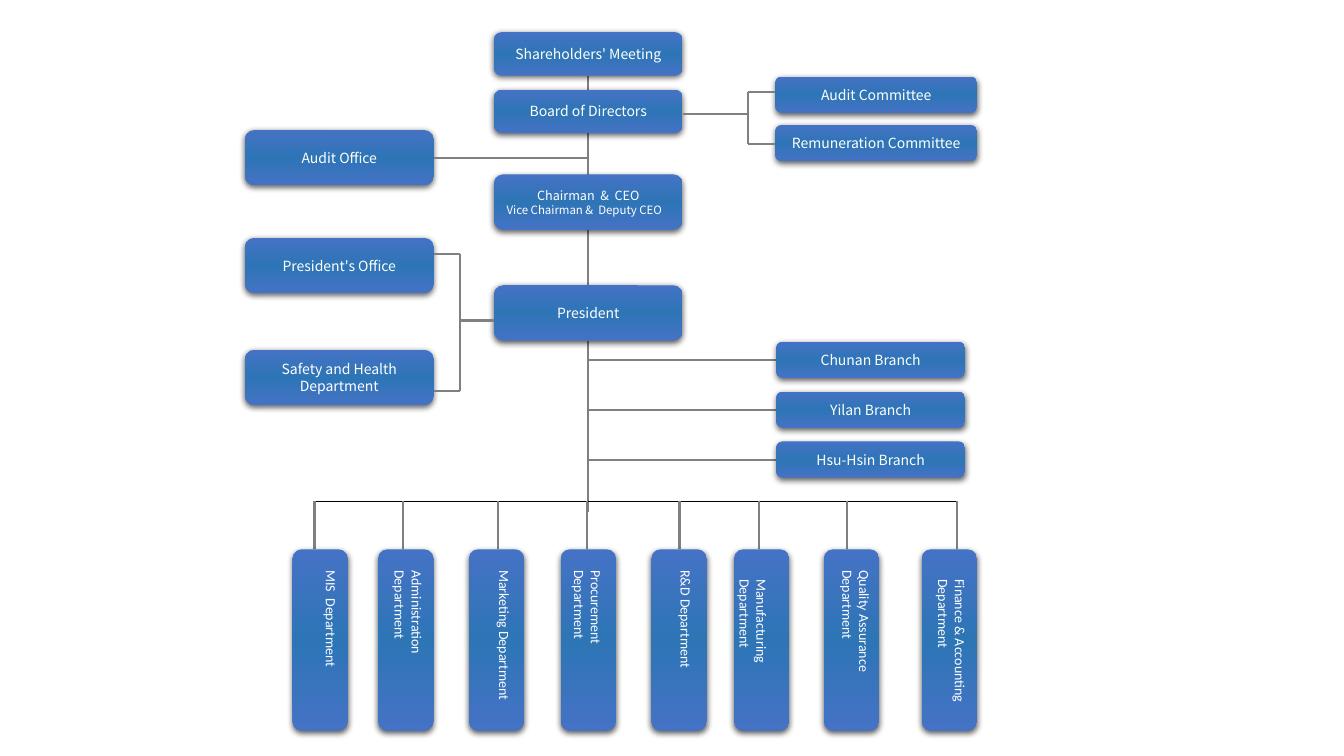
from lxml import etree
from pptx import Presentation, util as u
from pptx.dml.color import RGBColor
from pptx.enum import shapes, text
from pptx.oxml import parse_xml
from pptx.oxml.ns import nsdecls, qn

COLORS = {"edge": "4472C4", "middle": "2E75B6", "text": "FFFFFF",
          "line": "808080", "bus": "000000"}
BOX_FONT, DEPT_FONT = "Noto Sans CJK TC", "Calibri"
BOX_W = 1.87
SPINE_X = 5.83
BUS_Y = 4.97


def set_font(p, name, size):
    p.font.name, p.font.size = name, u.Pt(size)
    p.font.color.rgb = RGBColor.from_string(COLORS["text"])


def add_line(s, x1, y1, x2, y2, color="line", width=1.5):
    cn = s.shapes.add_connector(shapes.MSO_CONNECTOR.STRAIGHT,
                                *map(u.Inches, (x1, y1, x2, y2)))
    cn.line.color.rgb = RGBColor.from_string(COLORS[color])
    cn.line.width = u.Pt(width)
    etree.SubElement(cn._element.spPr, qn("a:effectLst"))


def add_box(s, x, y, w, h, *lines):
    """Rounded gradient box; each line is (text, size, alignment)."""
    sp = s.shapes.add_shape(shapes.MSO_SHAPE.ROUNDED_RECTANGLE,
                            *map(u.Inches, (x, y, w, h)))
    sp.line.fill.background()
    stops = "".join(f'<a:gs pos="{pos}"><a:srgbClr val="{COLORS[c]}"/></a:gs>'
                    for pos, c in ((0, "edge"), (50000, "middle"), (100000, "edge")))
    sp._element.spPr.find(qn("a:prstGeom")).addnext(parse_xml(
        f'<a:gradFill {nsdecls("a")} rotWithShape="1"><a:gsLst>{stops}</a:gsLst>'
        '<a:lin ang="5400000" scaled="0"/></a:gradFill>'))
    sp.shadow.inherit = False
    sp._element.spPr.find(qn("a:effectLst")).append(parse_xml(
        f'<a:outerShdw {nsdecls("a")} blurRad="57150" dist="19050" dir="5400000" '
        'algn="ctr" rotWithShape="0"><a:srgbClr val="000000"><a:alpha val="63000"/>'
        '</a:srgbClr></a:outerShdw>'))
    tf = sp.text_frame
    tf.word_wrap = True
    tf.vertical_anchor = text.MSO_ANCHOR.MIDDLE
    for i, (words, size, align) in enumerate(lines):
        p = tf.add_paragraph() if i else tf.paragraphs[0]
        p.text, p.alignment = words, align
        set_font(p, BOX_FONT, size)


def add_label_box(s, x, y, w, h, words):
    add_box(s, x, y, w, h, (words, 10, text.PP_ALIGN.CENTER))


def add_vertical_text(s, x, y, w, h, words):
    tb = s.shapes.add_textbox(*map(u.Inches, (x, y, w, h)))
    tf = tb.text_frame
    tf.word_wrap = True
    tb._element.txBody.bodyPr.set("vert", "eaVert")
    p = tf.paragraphs[0]
    p.text = words
    set_font(p, DEPT_FONT, 10)


def leadership(s, x, y):
    """Central column from the shareholders down to the president."""
    president_y = y + 2.51
    add_line(s, SPINE_X, y + 0.43, SPINE_X, president_y)
    add_line(s, SPINE_X, president_y + 0.55, SPINE_X, BUS_Y + 0.11)
    add_label_box(s, x, y, BOX_W, 0.43, "Shareholders' Meeting")
    add_label_box(s, x, y + 0.57, BOX_W, 0.43, "Board of Directors")
    add_box(s, x, y + 1.41, BOX_W, 0.55,
            ("Chairman  &  CEO", 9, text.PP_ALIGN.CENTER),
            ("Vice Chairman &  Deputy CEO", 8.2, text.PP_ALIGN.LEFT))
    add_label_box(s, x, president_y, BOX_W, 0.55, "President")


def offices(s, x, y):
    """Left-hand staff units and the bracket that joins two to the president."""
    for dy, name in ((0, "Audit Office"), (1.07, "President's Office"),
                     (2.18, "Safety and Health Department")):
        add_label_box(s, x, y + dy, BOX_W, 0.55, name)
    right = x + BOX_W
    bracket, top, bottom = right + 0.26, y + 1.23, y + 2.59
    add_line(s, right, y + 0.28, SPINE_X, y + 0.28)
    for end_y in (top, bottom):
        add_line(s, right, end_y, bracket, end_y)
    add_line(s, bracket, top, bracket, bottom)
    add_line(s, bracket, y + 1.89, right + 0.6, y + 1.89)


def committees(s, x, y):
    bracket = x - 0.27
    ends = y + 0.15, y + 0.67
    for i, name in enumerate(("Audit Committee", "Remuneration Committee")):
        add_label_box(s, x, y + 0.48 * i, 2, 0.36, name)
        add_line(s, bracket, ends[i], x, ends[i])
    add_line(s, bracket, ends[0], bracket, ends[1])
    add_line(s, bracket - 0.65, y + 0.37, bracket, y + 0.37)


def branches(s, x, y, pitch):
    for i, name in enumerate(("Chunan Branch", "Yilan Branch", "Hsu-Hsin Branch")):
        row_y = y + pitch * i
        add_line(s, SPINE_X, row_y + 0.18, x, row_y + 0.18)
        add_label_box(s, x, row_y, BOX_W, 0.36, name)


def departments(s, y, h):
    """Bottom row: box left, drop line x, text left, top offset, width, height."""
    rows = (
        ("MIS  Department", 2.9, 3.12, 3.05, 0.11, 0.37, 1.3),
        ("Administration Department", 3.75, 4, 3.73, 0.11, 0.54, 1.3),
        ("Marketing Department", 4.65, 4.94, 4.77, 0.11, 0.37, 1.51),
        ("Procurement Department", 5.56, 5.82, 5.51, 0.11, 0.54, 1.64),
        ("R&D Department", 6.46, 6.74, 6.57, 0.11, 0.37, 1.64),
        ("Manufacturing Department", 7.28, 7.53, 7.15, 0.2, 0.54, 1.64),
        ("Quality Assurance Department", 8.17, 8.4, 8.17, 0.11, 0.54, 1.22),
        ("Finance & Accounting Department", 9.14, 9.49, 9.12, 0.2, 0.54, 1.64),
    )
    add_line(s, rows[0][2], BUS_Y, rows[-1][2], BUS_Y, "bus", 0.5)
    for name, left, drop_x, text_x, dy, text_w, text_h in rows:
        add_line(s, drop_x, BUS_Y, drop_x, y)
        add_box(s, left, y, 0.55, h)
        add_vertical_text(s, text_x, y + dy, text_w, text_h, name)


def main():
    prs = Presentation()
    prs.slide_width, prs.slide_height = u.Inches(13.33), u.Inches(7.5)
    s = prs.slides.add_slide(prs.slide_layouts[6])
    leadership(s, 4.9, 0.32)
    offices(s, 2.43, 1.29)
    committees(s, 7.69, 0.76)
    branches(s, 7.7, 3.39, 0.495)
    departments(s, 5.45, 1.8)
    prs.save("out.pptx")


if __name__ == "__main__":
    main()
